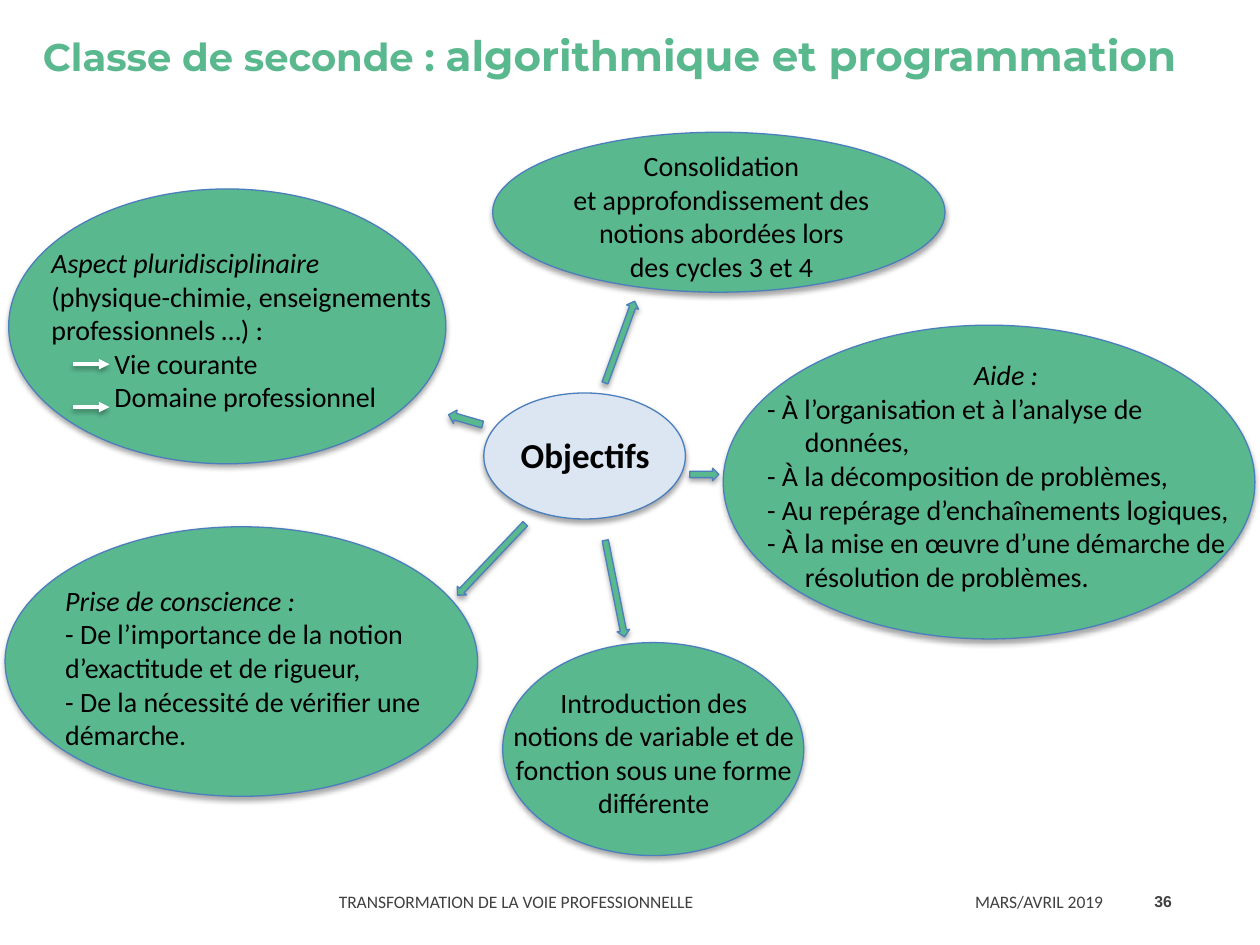
from dataclasses import dataclass

from lxml import etree
from pptx import Presentation
from pptx import util as u
from pptx.dml.color import RGBColor
from pptx.enum import shapes, text
from pptx.oxml import ns

GREEN = RGBColor(0x5A, 0xB8, 0x8F)
PALE_BLUE = RGBColor(0xDC, 0xE6, 0xF2)
OUTLINE = RGBColor(0x4B, 0x7E, 0xBC)
BLACK = RGBColor(0, 0, 0)
GREY = RGBColor(0x40, 0x40, 0x40)
WHITE = RGBColor(0xFF, 0xFF, 0xFF)

LEFT, CENTER, RIGHT = text.PP_ALIGN.LEFT, text.PP_ALIGN.CENTER, text.PP_ALIGN.RIGHT


@dataclass
class Run:
    text: str
    size: float = 16
    color: RGBColor = BLACK
    bold: bool = False
    italic: bool = False
    font: str = "Calibri"


@dataclass
class Para:
    runs: list
    align: int = LEFT
    hanging: float = 0
    tab: float = 0
    spacing: float = 0


def centered(*lines):
    return [Para([Run(line)], CENTER) for line in lines]


# Each goal: ellipse box, text box, arrow box, arrow rotation, paragraphs
GOALS = [
    ((287.3, 367.2, 172, 121.7), (280, 388, 187.2, 85),
     (347.8, 308.2, 7.2, 56.2), 348.7,
     centered("Introduction des",
              "notions de variable et de fonction sous une forme différente")),
    ((2.9, 301, 270, 154), (30.2, 329.8, 221.8, 104.4),
     (277.2, 291.6, 7.2, 56.2), 43.5,
     [Para([Run("Prise de conscience :", italic=True)]),
      Para([Run("- De l’importance de la notion d’exactitude et de rigueur,")]),
      Para([Run("- De la nécessité de vérifier une démarche.")])]),
    ((281.5, 75.6, 258.5, 91.4), (283, 81.4, 258.5, 85),
     (350.6, 170.6, 7.2, 49.7), 200,
     centered("Consolidation", "et approfondissement des",
              "notions abordées lors\ndes cycles 3 et 4")),
    ((413.3, 185.8, 303.8, 179.3), (431.3, 200.9, 287.3, 143.3),
     (398.9, 262.8, 7.2, 16.6), 270,
     [Para([Run("Aide :", italic=True)], CENTER)]
     + [Para([Run(line)], hanging=21.6) for line in (
         "- À l’organisation et à l’analyse de données,",
         "- À la décomposition de problèmes,",
         "- Au repérage d’enchaînements logiques,",
         "- À la mise en œuvre d’une démarche de résolution de problèmes.")]),
    ((5, 108, 249.8, 157), (22.3, 136.8, 236.2, 104.4),
     (262.1, 229.7, 7.9, 20.2), 106.1,
     [Para([Run("Aspect pluridisciplinaire ", italic=True),
            Run("(physique-chimie, enseignements professionnels …) :")]),
      Para([Run("\tVie courante")], tab=36),
      Para([Run("\tDomaine professionnel")], tab=36)]),
]


def points(values):
    return [u.Pt(value) for value in values]


def add_shadow(shape, opacity, distance):
    """Soft black shadow falling straight down."""
    effects = etree.SubElement(shape._element.spPr, ns.qn("a:effectLst"))
    shadow = etree.SubElement(effects, ns.qn("a:outerShdw"), blurRad=str(u.Pt(3.1)),
                              dist=str(u.Pt(distance)), dir="5400000", rotWithShape="0")
    color = etree.SubElement(shadow, ns.qn("a:srgbClr"), val="000000")
    etree.SubElement(color, ns.qn("a:alpha"), val=str(opacity * 1000))


def write_run(paragraph, item):
    for index, line in enumerate(item.text.split("\n")):
        if index:
            paragraph.add_line_break()
        run = paragraph.add_run()
        run.text = line
        font = run.font
        font.size, font.name = u.Pt(item.size), item.font
        font.bold, font.italic = item.bold, item.italic
        font.color.rgb = item.color


def write_text(frame, paras, anchor):
    frame.word_wrap = True
    frame.auto_size = text.MSO_AUTO_SIZE.NONE
    frame.vertical_anchor = anchor
    for index, para in enumerate(paras):
        paragraph = frame.add_paragraph() if index else frame.paragraphs[0]
        paragraph.alignment = para.align
        properties = paragraph._p.get_or_add_pPr()
        if para.spacing:
            paragraph.line_spacing = u.Pt(para.spacing)
        if para.hanging:
            properties.set("marL", str(u.Pt(para.hanging)))
            properties.set("indent", str(-u.Pt(para.hanging)))
        if para.tab:
            tabs = etree.SubElement(properties, ns.qn("a:tabLst"))
            etree.SubElement(tabs, ns.qn("a:tab"), pos=str(u.Pt(para.tab)), algn="l")
        for item in para.runs:
            write_run(paragraph, item)


def add_text(slide, box, paras, anchor=text.MSO_ANCHOR.TOP):
    write_text(slide.shapes.add_textbox(*points(box)).text_frame, paras, anchor)


def add_filled_shape(slide, kind, box, fill=GREEN, rotation=0):
    shape = slide.shapes.add_shape(kind, *points(box))
    shape.fill.solid()
    shape.fill.fore_color.rgb = fill
    shape.line.color.rgb = OUTLINE
    shape.line.width = u.Pt(0.75)
    shape.rotation = rotation
    add_shadow(shape, 35, 1.8)


def add_white_arrow(slide, y):
    arrow = slide.shapes.add_connector(shapes.MSO_CONNECTOR.STRAIGHT,
                                       *points((41.8, y, 62.6, y)))
    arrow.line.color.rgb = WHITE
    arrow.line.width = u.Pt(2)
    etree.SubElement(arrow.line._get_or_add_ln(), ns.qn("a:tailEnd"), type="triangle")
    add_shadow(arrow, 38, 1.6)


def add_title(slide):
    title = slide.shapes.title
    title.left, title.top, title.width, title.height = points((17.3, 2.9, 699.1, 56.9))
    style = dict(color=GREEN, bold=True, font="Montserrat")
    write_text(title.text_frame,
               [Para([Run("Classe de seconde : ", 22, **style),
                      Run("algorithmique et programmation", 24, **style)])],
               text.MSO_ANCHOR.MIDDLE)


def add_footer(slide):
    middle = text.MSO_ANCHOR.MIDDLE
    for box, words in (((186.5, 499.7, 363.6, 30.2),
                        "TRANSFORMATION DE LA VOIE PROFESSIONNELLE"),
                       ((550.1, 500.4, 91.4, 28.8), "MARS/AVRIL 2019")):
        add_text(slide, box, [Para([Run(words, 10, GREY)], spacing=13.2)], middle)
    add_text(slide, (641.5, 500.4, 35.3, 28.8),
             [Para([Run("36", 9, GREY, bold=True, font="Arial")], RIGHT)], middle)


def main():
    presentation = Presentation()
    presentation.slide_width, presentation.slide_height = points((720, 540))
    slide = presentation.slides.add_slide(presentation.slide_layouts[5])
    add_title(slide)
    add_footer(slide)

    # Central topic
    ellipse = shapes.MSO_SHAPE.OVAL
    add_filled_shape(slide, ellipse, (276.5, 224.6, 115.2, 72), PALE_BLUE)
    add_text(slide, (267.8, 244.1, 133.2, 31.7),
             [Para([Run("Objectifs", 20, bold=True)], CENTER)])

    # Goals around it
    for ellipse_box, text_box, arrow_box, rotation, paras in GOALS:
        add_filled_shape(slide, ellipse, ellipse_box)
        add_text(slide, text_box, paras)
        add_filled_shape(slide, shapes.MSO_SHAPE.DOWN_ARROW, arrow_box, rotation=rotation)

    # Markers of the two multidisciplinary items
    for y in (208.1, 232.6):
        add_white_arrow(slide, y)

    presentation.save("out.pptx")


if __name__ == "__main__":
    main()
